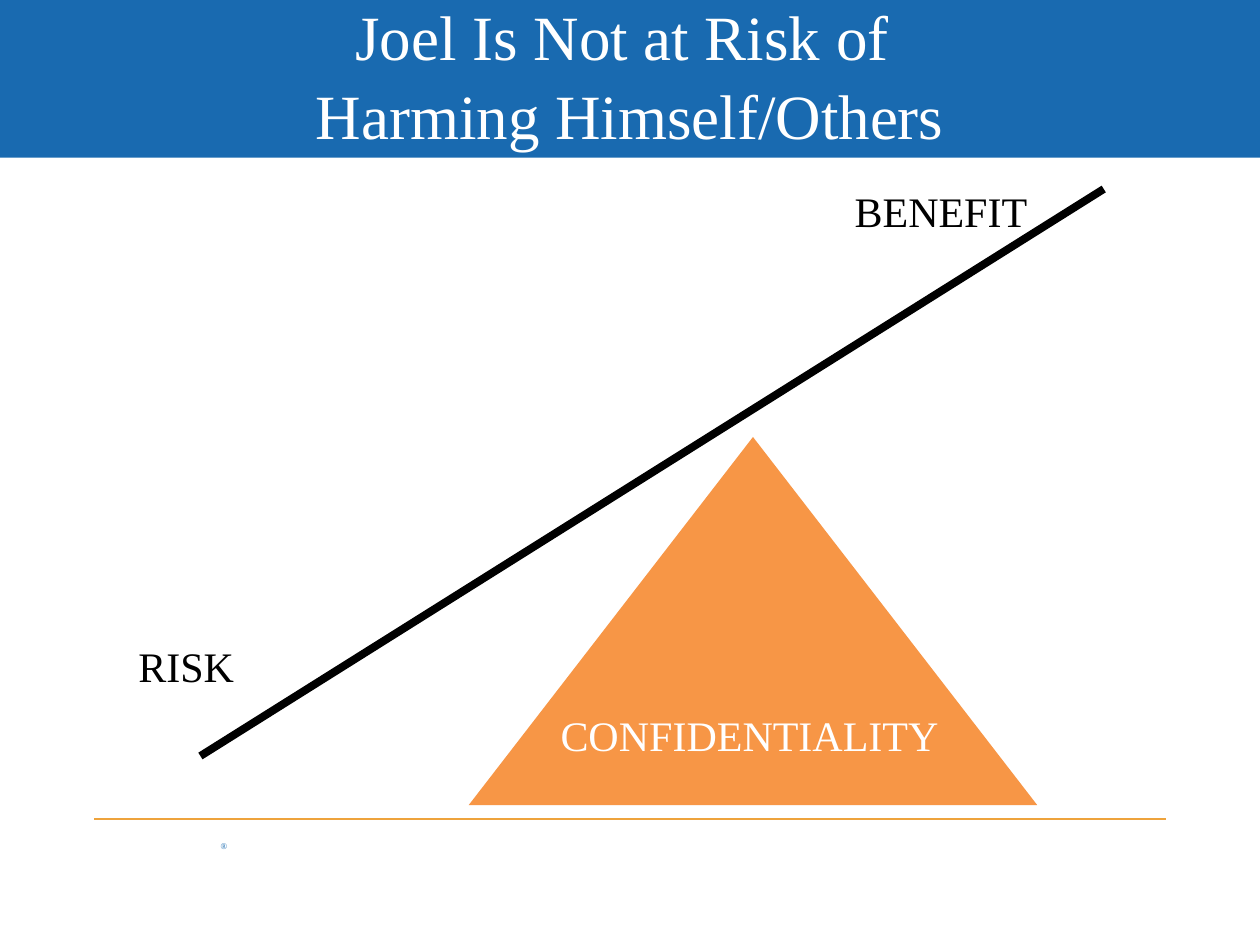
from dataclasses import dataclass

from lxml.etree import SubElement
from pptx import Presentation
from pptx.dml.color import RGBColor
from pptx.enum.shapes import MSO_CONNECTOR, MSO_SHAPE
from pptx.enum.text import MSO_ANCHOR, PP_ALIGN
from pptx.oxml.ns import qn
from pptx.util import Cm, Pt


@dataclass(frozen=True)
class Theme:
    font: str = "Times New Roman"
    blue: str = "196AB0"
    gold: str = "EEA33C"
    orange: str = "F79646"
    black: str = "000000"
    white: str = "FFFFFF"
    title_size: float = 36
    label_size: float = 24
    mark_size: float = 5
    beam_width: float = 4.5
    rule_width: float = 0.75


class SlideBuilder:
    def __init__(self, slide, theme):
        self.slide = slide
        self.theme = theme

    def shape(self, kind, left, top, width, height, color):
        shape = self.slide.shapes.add_shape(
            kind, Cm(left), Cm(top), Cm(width), Cm(height))
        shape.shadow.inherit = False
        shape.fill.solid()
        shape.fill.fore_color.rgb = RGBColor.from_string(color)
        shape.line.fill.background()

    def line(self, start, end, color, width):
        connector = self.slide.shapes.add_connector(
            MSO_CONNECTOR.STRAIGHT, *map(Cm, start + end))
        connector.line.color.rgb = RGBColor.from_string(color)
        connector.line.width = Pt(width)
        SubElement(connector._element.spPr, qn("a:effectLst"))

    def text(self, text, left, top, width, height, size, color,
             align=PP_ALIGN.LEFT, anchor=MSO_ANCHOR.TOP, wrap=True,
             inset=True, spacing=1.0):
        box = self.slide.shapes.add_textbox(
            Cm(left), Cm(top), Cm(width), Cm(height))
        frame = box.text_frame
        frame.word_wrap = wrap
        frame.vertical_anchor = anchor
        if not inset:
            frame.margin_left = frame.margin_right = 0
            frame.margin_top = frame.margin_bottom = 0
        paragraph = frame.paragraphs[0]
        paragraph.text = text
        paragraph.alignment = align
        paragraph.line_spacing = spacing
        for run in paragraph.runs:
            run.font.name = self.theme.font
            run.font.size = Pt(size)
            run.font.color.rgb = RGBColor.from_string(color)


def main():
    theme = Theme()
    presentation = Presentation()
    presentation.slide_width = Cm(25.4)
    presentation.slide_height = Cm(19.05)
    slide = presentation.slides.add_slide(presentation.slide_layouts[6])
    builder = SlideBuilder(slide, theme)

    # Title band and footer
    builder.shape(MSO_SHAPE.RECTANGLE, 0, 0, 25.4, 3.18, theme.blue)
    builder.text("®", 4.45, 16.94, 0.64, 0.2, theme.mark_size, theme.blue,
                 inset=False)
    builder.line((1.9, 16.51), (23.5, 16.51), theme.gold, theme.rule_width)

    # Seesaw: fulcrum and tilted beam
    builder.shape(MSO_SHAPE.ISOSCELES_TRIANGLE, 9.45, 8.81, 11.46, 7.42,
                  theme.orange)
    builder.line((4.04, 15.24), (22.25, 3.81), theme.black, theme.beam_width)

    # Labels
    builder.text("RISK", 2.54, 12.78, 3.15, 1.27, theme.label_size,
                 theme.black)
    builder.text("BENEFIT", 15.24, 3.61, 5.72, 1.27, theme.label_size,
                 theme.black, align=PP_ALIGN.RIGHT)
    builder.text("CONFIDENTIALITY", 11.05, 14.17, 8.38, 1.27,
                 theme.label_size, theme.white, wrap=False)

    # Title
    builder.text("Joel Is Not at Risk of \vHarming Himself/Others",
                 1.27, 0.2, 22.86, 2.54, theme.title_size, theme.white,
                 align=PP_ALIGN.CENTER, anchor=MSO_ANCHOR.MIDDLE,
                 spacing=1.05)

    presentation.save("out.pptx")


if __name__ == "__main__":
    main()
